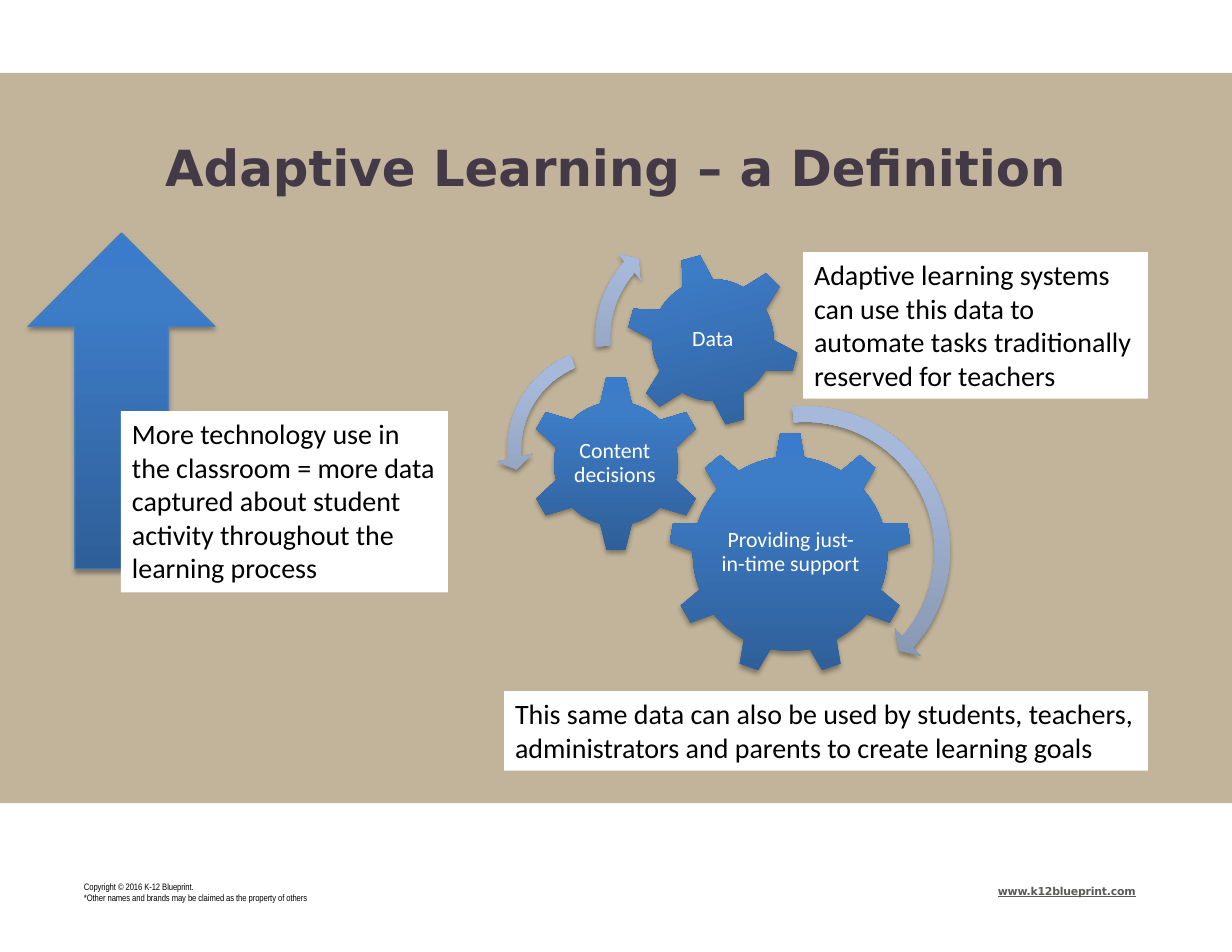
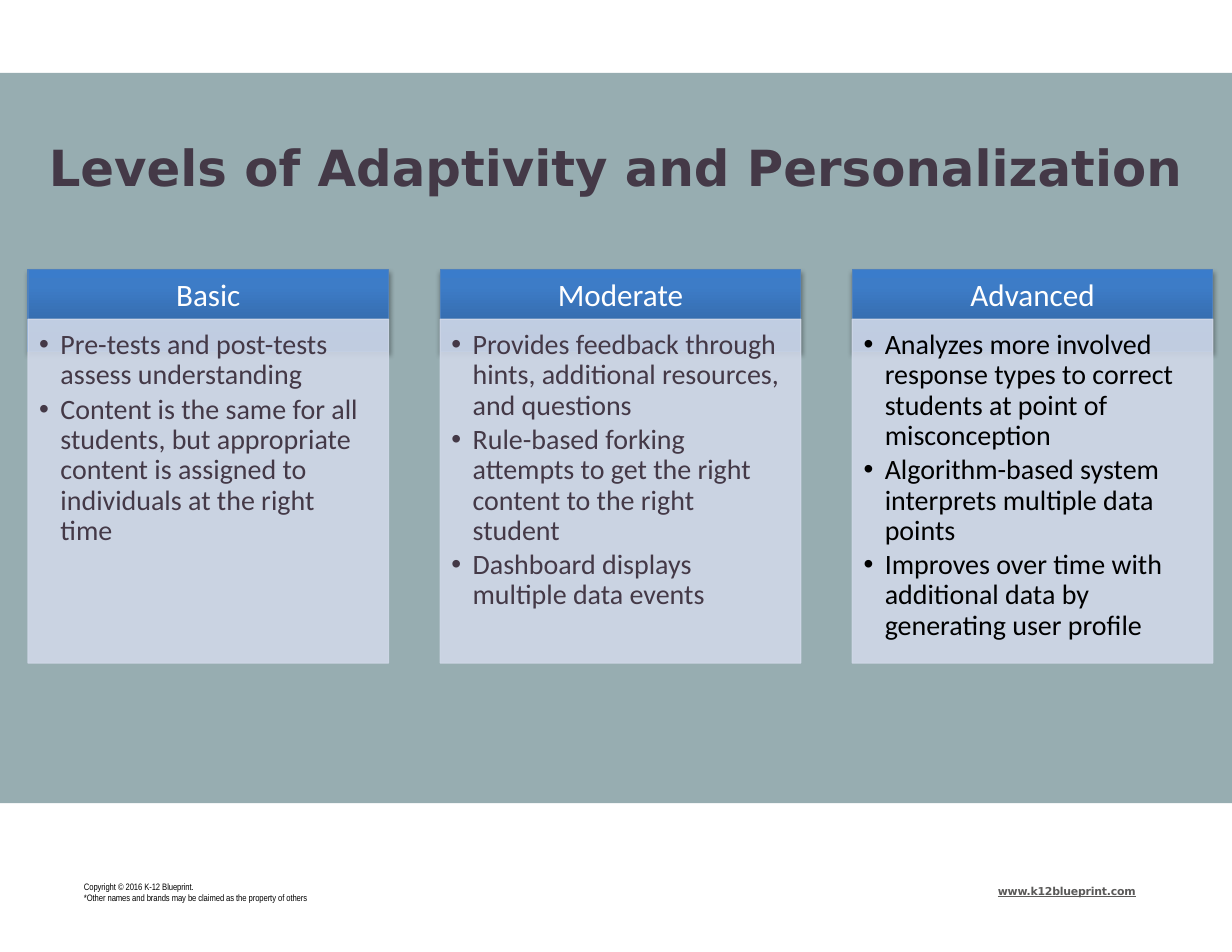
from copy import deepcopy

from pptx import Presentation, util as u
from pptx.dml.color import RGBColor
from pptx.enum import shapes, text
from pptx.oxml import parse_xml
from pptx.oxml.ns import nsdecls, qn

# Grid of quarter-inch cells
CELL = u.Inches(0.25)
COLUMNS, ROWS = 44, 34

SAND = RGBColor(0xC1, 0xB4, 0x9A)
SAGE = RGBColor(0x97, 0xAD, 0xB1)
PLUM = RGBColor(0x44, 0x39, 0x47)
GREY = RGBColor(0x5B, 0x5A, 0x59)
BLACK = RGBColor(0, 0, 0)
WHITE = RGBColor(0xFF, 0xFF, 0xFF)
ARROW_EDGE = RGBColor(0x4B, 0x7E, 0xBC)
HEADER_EDGE = RGBColor(0x4F, 0x81, 0xBD)
PANEL = RGBColor(0xD0, 0xD8, 0xE8)
# Gradients run from bottom to top, with stops at STOPS
BLUES = (RGBColor(0x2F, 0x5F, 0x99), RGBColor(0x3D, 0x7C, 0xC7),
         RGBColor(0x3A, 0x7C, 0xCB))
PALE_BLUES = (RGBColor(0x81, 0x8F, 0xA8), RGBColor(0xA7, 0xB9, 0xDA),
              RGBColor(0xA7, 0xBA, 0xDC))
STOPS = (0, 0.8, 1)

BODY_FONT, TITLE_FONT, FOOTER_FONT = "Calibri", "DejaVu Sans", "Arial Narrow"
KIND = shapes.MSO_SHAPE
TOP, MIDDLE = text.MSO_ANCHOR.TOP, text.MSO_ANCHOR.MIDDLE
LEFT, CENTER = text.PP_ALIGN.LEFT, text.PP_ALIGN.CENTER

SHADOW = (f'<a:outerShdw {nsdecls("a")} blurRad="40000" dist="23000" '
          'dir="5400000" rotWithShape="0"><a:srgbClr val="000000">'
          '<a:alpha val="35000"/></a:srgbClr></a:outerShdw>')
ALPHA = f'<a:alpha {nsdecls("a")} val="90000"/>'
BULLET = f'<a:buChar {nsdecls("a")} char="•"/>'


def cells(*values):
    return [round(value * CELL) for value in values]


class Style:
    """Holds the deck, the current page and the shared look."""

    def __init__(self):
        self.deck = Presentation()
        self.deck.slide_width, self.deck.slide_height = cells(COLUMNS, ROWS)
        self.page = None

    def start(self, layout_name, title, band_color):
        layout = self.deck.slide_layouts.get_by_name(layout_name)
        self.page = self.deck.slides.add_slide(layout)
        self.rect((0, 2.6, COLUMNS, 26.08), band_color)
        heading = self.place(self.page.shapes.title, (0, 4.88, COLUMNS, 2.16))
        self.set_text(heading, [title], 32, PLUM, font=TITLE_FONT, bold=True,
                      align=CENTER, insets=(0, 0, 0, 0))
        self.footers()

    def footers(self):
        notice = self.text_box((2.96, 31.48, 9.04, 0.8))
        self.set_text(notice, ["Copyright © 2016 K-12 Blueprint.",
                               "*Other names and brands may be claimed as the property of others"],
                      6, BLACK, font=FOOTER_FONT, insets=(0.01, 0, 0, 0),
                      spacing=u.Pt(7.1), tracking=-5)
        address = self.text_box((35.6, 31.6, 5.24, 0.48))
        self.set_text(address, ["www.k12blueprint.com"], 7, GREY, font=TITLE_FONT,
                      bold=True, underline=True, insets=(0.01, 0, 0, 0), tracking=-10)

    def place(self, placeholder, area):
        """Move a placeholder and bring it to the front."""
        (placeholder.left, placeholder.top,
         placeholder.width, placeholder.height) = cells(*area)
        self.page.shapes._spTree.append(placeholder._element)
        return placeholder

    def text_box(self, area):
        return self.page.shapes.add_textbox(*cells(*area))

    def shape(self, kind, area):
        item = self.page.shapes.add_shape(kind, *cells(*area))
        item.shadow.inherit = False
        item.line.fill.background()
        return item

    def rect(self, area, color):
        item = self.shape(KIND.RECTANGLE, area)
        item.fill.solid()
        item.fill.fore_color.rgb = color
        return item

    def glossy(self, kind, area, colors=BLUES, edge=None, adjust=(), turn=0):
        """A preset shape with a gradient and a soft shadow."""
        item = self.shape(kind, area)
        item.rotation = turn
        for index, value in enumerate(adjust):
            item.adjustments[index] = value
        item.fill.gradient()
        item.fill.gradient_angle = 90
        properties = item._element.spPr
        stop_list = properties.find(".//" + qn("a:gsLst"))
        stop_list.append(deepcopy(stop_list[-1]))
        for stop, color, position in zip(item.fill.gradient_stops, colors, STOPS):
            stop.color.rgb = color
            stop.position = position
        properties.find(qn("a:effectLst")).append(parse_xml(SHADOW))
        if edge is not None:
            item.line.color.rgb = edge
            item.line.width = u.Pt(0.75)
        return item

    def note(self, area, words):
        self.set_text(self.rect(area, WHITE), [words], 18, BLACK)

    def label(self, area, words):
        self.set_text(self.text_box(area), [words], 14, WHITE, align=CENTER,
                      anchor=MIDDLE, insets=(0.02,) * 4, spacing=0.9)

    def panel(self, placeholder, area, points, color):
        """A list placeholder on a translucent pale ground."""
        box = self.place(placeholder, area)
        box.fill.solid()
        box.fill.fore_color.rgb = PANEL
        box.line.color.rgb = PANEL
        box.line.width = u.Pt(0.75)
        for ground in box._element.spPr.iter(qn("a:srgbClr")):
            ground.append(parse_xml(ALPHA))
        self.set_text(box, points, 18, color, insets=(0.1, 0.1, 0.14, 0.16),
                      spacing=0.9, after=2.7, bullets=True)

    def set_text(self, box, paragraphs, size, color, font=BODY_FONT, bold=False,
                 underline=None, align=LEFT, anchor=TOP, insets=(0.1, 0.05, 0.1, 0.05),
                 spacing=1.0, after=0, tracking=0, bullets=False):
        frame = box.text_frame
        frame.word_wrap = True
        frame.auto_size = text.MSO_AUTO_SIZE.NONE
        frame.vertical_anchor = anchor
        (frame.margin_left, frame.margin_top,
         frame.margin_right, frame.margin_bottom) = map(u.Inches, insets)
        for index, words in enumerate(paragraphs):
            para = frame.add_paragraph() if index else frame.paragraphs[0]
            if bullets:
                properties = para._p.get_or_add_pPr()
                properties.set("marL", str(u.Inches(0.19)))
                properties.set("indent", str(u.Inches(-0.19)))
                properties.append(parse_xml(BULLET))
            para.alignment = align
            para.line_spacing = spacing
            para.space_before = u.Pt(0)
            para.space_after = u.Pt(after)
            span = para.add_run()
            span.text = words
            span.font.name, span.font.size = font, u.Pt(size)
            span.font.bold, span.font.underline = bold, underline
            span.font.color.rgb = color
            if tracking:
                span._r.get_or_add_rPr().set("spc", str(tracking))


def definition_page(style):
    style.start("Title Only", "Adaptive Learning – a Definition", SAND)

    # Rising use of technology
    style.glossy(KIND.UP_ARROW, (1, 8.32, 6.68, 12), edge=ARROW_EDGE)
    style.note((4.32, 14.68, 11.68, 6.48),
               "More technology use in the classroom = more data captured about "
               "student activity throughout the learning process")

    # Gears: kind, area, turn, label area, label
    gears = [
        (KIND.GEAR_9, (23.88, 15.44, 8.68, 8.68), 0,
         (25.64, 17.48, 5.2, 4.48), "Providing just-in-time support"),
        (KIND.GEAR_6, (18.84, 13.4, 6.32, 6.32), 0,
         (20.4, 15, 3.12, 3.12), "Content decisions"),
        (KIND.GEAR_6, (22.36, 9.04, 6.2, 6.2), 345,
         (23.72, 10.4, 3.48, 3.48), "Data"),
    ]
    for kind, area, turn, label_area, words in gears:
        style.glossy(kind, area, turn=turn)
        style.label(label_area, words)

    # Arrows around the gears: kind, left, top, size, adjustments
    turns = [
        (KIND.CIRCULAR_ARROW, 23.2, 14.12, 11.12, (0.05, 2.99, 25, 158.96, 0.06)),
        (KIND.LEFT_CIRCULAR_ARROW, 17.72, 12, 8.08, (0.06, 4.3, 104.89, 148.38, 0.08)),
        (KIND.CIRCULAR_ARROW, 20.92, 7.68, 8.72, (0.06, 3.94, 133.14, 105.08, 0.07)),
    ]
    for kind, left, top, size, adjust in turns:
        style.glossy(kind, (left, top, size, size), PALE_BLUES, adjust=adjust)

    # Uses of the data
    style.note((28.68, 9, 12.32, 5.24),
               "Adaptive learning systems can use this data to automate tasks "
               "traditionally reserved for teachers")
    style.note((18, 24.68, 23, 2.84),
               "This same data can also be used by students, teachers, "
               "administrators and parents to create learning goals")


def levels_page(style):
    style.start("Comparison", "Levels of Adaptivity and Personalization", SAGE)
    levels = [
        ("Basic", PLUM, [
            "Pre-tests and post-tests assess understanding",
            "Content is the same for all students, but appropriate content is "
            "assigned to individuals at the right time"]),
        ("Moderate", PLUM, [
            "Provides feedback through hints, additional resources, and questions",
            "Rule-based forking attempts to get the right content to the right student",
            "Dashboard displays multiple data events"]),
        ("Advanced", BLACK, [
            "Analyzes more involved response types to correct students at point "
            "of misconception",
            "Algorithm-based system interprets multiple data points",
            "Improves over time with additional data by generating user profile"]),
    ]
    title_id = style.page.shapes.title.shape_id
    bodies = [item for item in style.page.placeholders if item.shape_id != title_id]
    width, pitch = 12.88, 14.72
    for index, (level, color, points) in enumerate(levels):
        left = 1 + index * pitch
        header = style.glossy(KIND.RECTANGLE, (left, 9.64, width, 2.92),
                              edge=HEADER_EDGE)
        style.set_text(header, [level], 20, WHITE, align=CENTER, spacing=0.9,
                       insets=(0.16, 0.09, 0.16, 0.09))
        style.panel(bodies[index], (left, 11.4, width, 12.28), points, color)
    for spare in bodies[len(levels):]:
        spare._element.getparent().remove(spare._element)


def main():
    style = Style()
    definition_page(style)
    levels_page(style)
    style.deck.save("out.pptx")


if __name__ == "__main__":
    main()
